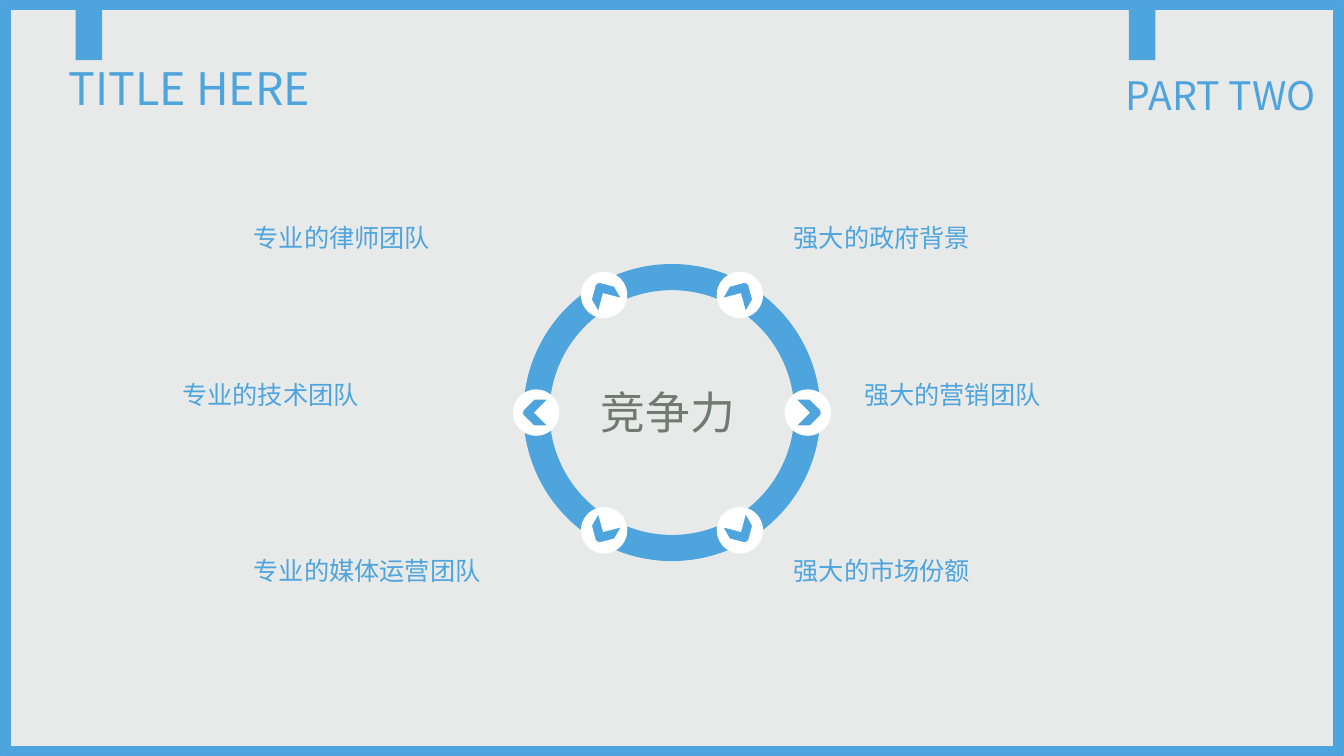
import math

import lxml.etree
import pptx
import pptx.dml.color
import pptx.enum.shapes
import pptx.enum.text
import pptx.oxml.ns
import pptx.util

Pt = pptx.util.Pt
RGB = pptx.dml.color.RGBColor.from_string
SHAPE = pptx.enum.shapes.MSO_SHAPE
ALIGN = pptx.enum.text.PP_ALIGN
ANCHOR = pptx.enum.text.MSO_ANCHOR
AUTO = pptx.enum.text.MSO_AUTO_SIZE
qn = pptx.oxml.ns.qn

THEME = {
    "font": "Noto Sans CJK SC",
    "blue": RGB("4EA4DD"), "grey": RGB("6F7A74"),
    "white": RGB("FFFFFF"), "back": RGB("E8EAE9"),
    "title": Pt(32), "part": Pt(28), "label": Pt(18), "centre": Pt(32),
}


def write(sp, box, text, size, color, frame, para):
    """Place a text shape and fill it with one formatted paragraph."""
    sp.left, sp.top, sp.width, sp.height = (Pt(v) for v in box)
    tf = sp.text_frame
    p = tf.paragraphs[0]
    r = p.add_run()
    r.text = text
    font = {"name": THEME["font"], "size": THEME[size], "bold": False}
    for target, values in ((tf, frame), (p, para), (r.font, font)):
        for name, value in values.items():
            setattr(target, name, value)
    r.font.color.rgb = THEME[color]
    ea = lxml.etree.SubElement(r.font._element, qn("a:ea"))
    ea.set("typeface", THEME["font"])


def paint(sp, color):
    sp.shadow.inherit = False
    sp.fill.solid()
    sp.fill.fore_color.rgb = THEME[color]
    sp.line.fill.background()


prs = pptx.Presentation()
prs.slide_width, prs.slide_height = Pt(960), Pt(540)
s = prs.slides.add_slide(prs.slide_layouts.get_by_name("Section Header"))
s.background.fill.solid()
s.background.fill.fore_color.rgb = THEME["back"]

# Frame and hanging tabs
frame = s.shapes.add_shape(SHAPE.RECTANGLE, Pt(3.6), Pt(2.9), Pt(952.8), Pt(534.2))
frame.shadow.inherit = False
frame.fill.background()
frame.line.color.rgb = THEME["blue"]
frame.line.width = Pt(8.5)
for x in (54, 806.4):
    paint(s.shapes.add_shape(SHAPE.RECTANGLE, Pt(x), Pt(2.9), Pt(19), Pt(40.2)), "blue")

# Headings
heading_frame = {"word_wrap": True, "auto_size": AUTO.NONE, "vertical_anchor": ANCHOR.MIDDLE}
heading_para = {"alignment": ALIGN.LEFT, "line_spacing": 0.9, "space_before": Pt(10)}
title, part = s.placeholders
write(title, (41.8, 44.6, 502, 40.3), "TITLE HERE", "title", "blue", heading_frame, heading_para)
write(part, (797, 51.1, 162.7, 30.2), "PART TWO", "part", "blue",
      {**heading_frame, "margin_top": Pt(10.7)}, heading_para)

# Ring
CX, CY, RING, ORBIT, BADGE = 480, 294.7, 106.1, 97, 16.6
ring = s.shapes.add_shape(SHAPE.DONUT, Pt(CX - RING), Pt(CY - RING), Pt(2 * RING), Pt(2 * RING))
ring.adjustments[0] = 0.088
paint(ring, "blue")

# Badges: a disc with a chevron cut out, pointing outwards around the ring
UNITS = 100  # outline units in a point
R = round(BADGE * UNITS)
BEND = 0.5523  # handle length of a quarter circle
compass = [(0, -1), (1, 0), (0, 1), (-1, 0), (0, -1)]
disc = [(R * u, R * v) for u, v in compass]
chevron = [(UNITS * u, UNITS * v) for u, v in
           [(0, -10.7), (9.2, -1.5), (9.2, 7.6), (0, -1.5), (-9.2, 7.6), (-9.2, -1.5)]]
for angle in (270, 330, 30, 90, 150, 210):
    x = CX + ORBIT * math.sin(math.radians(angle))
    y = CY - ORBIT * math.cos(math.radians(angle))
    fb = s.shapes.build_freeform(*disc[0], scale=Pt(1) / UNITS)
    fb.add_line_segments(disc[1:])
    fb.move_to(*chevron[0])
    fb.add_line_segments(chevron[1:])
    badge = fb.convert_to_shape(Pt(x), Pt(y))
    sides = list(badge._element.iter(qn("a:lnTo")))[:4]
    for side, (ax, ay), (bx, by) in zip(sides, compass, compass[1:]):
        side.tag = qn("a:cubicBezTo")
        side.remove(side[0])
        for px, py in ((ax + BEND * bx, ay + BEND * by), (bx + BEND * ax, by + BEND * ay), (bx, by)):
            pt = lxml.etree.SubElement(side, qn("a:pt"))
            pt.set("x", str(round(R + R * px)))
            pt.set("y", str(round(R + R * py)))
    badge.rotation = angle
    paint(badge, "white")

# Labels beside the ring
label_frame = {"word_wrap": True, "auto_size": AUTO.SHAPE_TO_FIT_TEXT}
label_para = {"alignment": ALIGN.JUSTIFY, "line_spacing": 1.2}
rows = [
    (150.8, 174.2, 559.9, "专业的律师团队", "强大的政府背景"),
    (263.2, 123.1, 610.1, "专业的技术团队", "强大的营销团队"),
    (388.8, 174.2, 559.9, "专业的媒体运营团队", "强大的市场份额"),
]
for y, left, right, left_text, right_text in rows:
    for x, text in ((left, left_text), (right, right_text)):
        write(s.shapes.add_textbox(0, 0, 0, 0), (x, y, 222.5, 33.1), text,
              "label", "blue", label_frame, label_para)
write(s.shapes.add_textbox(0, 0, 0, 0), (421.9, 271.1, 126, 46.1), "竞争力",
      "centre", "grey", label_frame, {})

prs.save("out.pptx")
